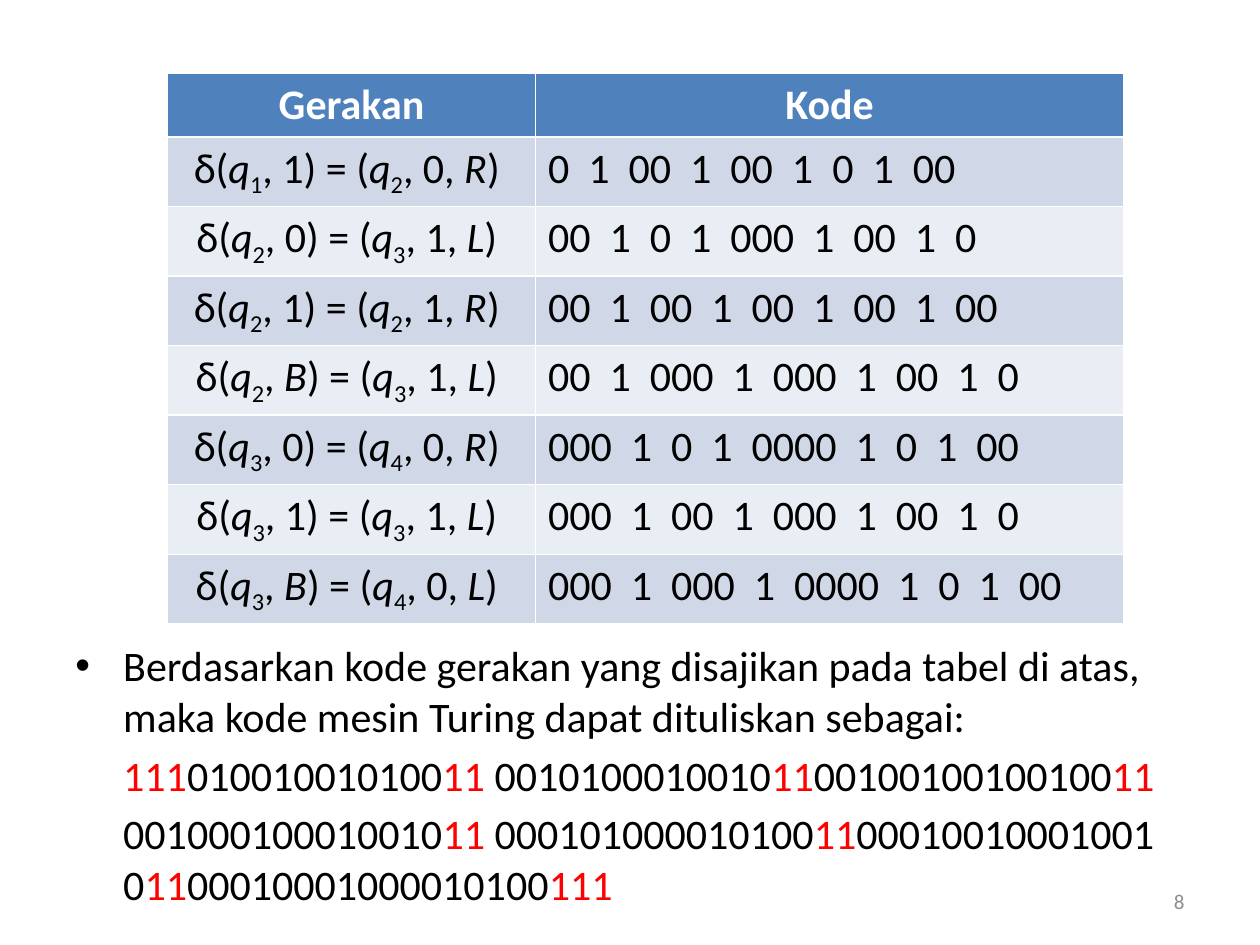
"""Build a slide that tabulates Turing machine moves with their binary codes."""
import lxml.etree
import pptx
import pptx.dml.color
import pptx.enum.text
import pptx.oxml.ns
import pptx.util

Inches = pptx.util.Inches
Pt = pptx.util.Pt
RGBColor = pptx.dml.color.RGBColor
ALIGN = pptx.enum.text.PP_ALIGN

BLACK = RGBColor(0, 0, 0)
WHITE = RGBColor(255, 255, 255)
RED = RGBColor(255, 0, 0)
GRAY = RGBColor(0x8C, 0x8C, 0x8C)
HEADER_BLUE = RGBColor(0x4F, 0x81, 0xBD)
BAND_COLORS = [RGBColor(0xD0, 0xD8, 0xE8), RGBColor(0xE9, 0xED, 0xF4)]

MOVES = [
    ("1", "1", "2", "0", "R", "0  1  00  1  00  1  0  1  00"),
    ("2", "0", "3", "1", "L", "00  1  0  1  000  1  00  1  0"),
    ("2", "1", "2", "1", "R", "00  1  00  1  00  1  00  1  00"),
    ("2", "B", "3", "1", "L", "00  1  000  1  000  1  00  1  0"),
    ("3", "0", "4", "0", "R", "000  1  0  1  0000  1  0  1  00"),
    ("3", "1", "3", "1", "L", "000  1  00  1  000  1  00  1  0"),
    ("3", "B", "4", "0", "L", "000  1  000  1  0000  1  0  1  00"),
]
INTRO = ("Berdasarkan kode gerakan yang disajikan pada tabel di atas, "
         "maka kode mesin Turing dapat dituliskan sebagai:")
MACHINE_CODE = [
    "|111|010010010100|11| 0010100010010|11|00100100100100|11|",
    "001000100010010|11| 000101000010100|11|00010010001001 0|11|"
    "00010001000010100|111|",
]


def style_para(para, color, size=24, align=ALIGN.LEFT):
    para.alignment = align
    para.font.name = "Calibri"
    para.font.size = Pt(size)
    para.font.color.rgb = color


def add_span(para, text, italic=False, subscript=False):
    span = para.add_run()
    span.text = text
    if italic:
        span.font.italic = True
    if subscript:
        span.font._element.set("baseline", "-25000")
    return span


deck = pptx.Presentation()
deck.slide_width, deck.slide_height = Inches(10), Inches(7.5)
page = deck.slides.add_slide(deck.slide_layouts[6])

table = page.shapes.add_table(
    len(MOVES) + 1, 2, Inches(1.33), Inches(0.58), Inches(7.59), Inches(4.35)).table
table.columns[0].width, table.columns[1].width = Inches(2.92), Inches(4.67)
for row in table.rows:
    row.height = Inches(0.55)
table.rows[0].height = Inches(0.5)

for cell, title in zip(table.rows[0].cells, ["Gerakan", "Kode"]):
    cell.fill.solid()
    cell.fill.fore_color.rgb = HEADER_BLUE
    para = cell.text_frame.paragraphs[0]
    para.text = title
    style_para(para, WHITE, align=ALIGN.CENTER)
    para.font.bold = True

for index, (state, read, target, write, move, code) in enumerate(MOVES):
    move_cell, code_cell = table.rows[index + 1].cells
    for cell in (move_cell, code_cell):
        cell.fill.solid()
        cell.fill.fore_color.rgb = BAND_COLORS[index % 2]
    para = move_cell.text_frame.paragraphs[0]
    style_para(para, BLACK, align=ALIGN.CENTER)
    add_span(para, "δ(")
    add_span(para, "q", italic=True)
    add_span(para, state, subscript=True)
    add_span(para, ", ")
    add_span(para, read, italic=read.isalpha())
    add_span(para, ") = (")
    add_span(para, "q", italic=True)
    add_span(para, target, subscript=True)
    add_span(para, f", {write}, ")
    add_span(para, move, italic=True)
    add_span(para, ") ")
    para = code_cell.text_frame.paragraphs[0]
    para.text = code
    style_para(para, BLACK)

body = page.shapes.add_textbox(Inches(0.5), Inches(5.03), Inches(9), Inches(2.05)).text_frame
body.word_wrap = True
para = body.paragraphs[0]
para.text = INTRO
style_para(para, BLACK)
properties = para._p.get_or_add_pPr()
properties.set("marL", str(Inches(0.38)))
properties.set("indent", str(Inches(-0.38)))
bullet_font = lxml.etree.Element(pptx.oxml.ns.qn("a:buFont"), typeface="Arial")
bullet = lxml.etree.Element(pptx.oxml.ns.qn("a:buChar"), char="•")
properties.insert(0, bullet_font)
properties.insert(1, bullet)

for line in MACHINE_CODE:
    para = body.add_paragraph()
    style_para(para, BLACK)
    para.space_before = Pt(4.8)
    para._p.get_or_add_pPr().set("marL", str(Inches(0.38)))
    for position, piece in enumerate(line.split("|")):
        if piece:
            span = add_span(para, piece)
            span.font.color.rgb = RED if position % 2 else BLACK

number_box = page.shapes.add_textbox(Inches(7.17), Inches(6.95), Inches(2.33), Inches(0.4))
number_box.text_frame.word_wrap = True
number_box.text_frame.vertical_anchor = pptx.enum.text.MSO_ANCHOR.MIDDLE
para = number_box.text_frame.paragraphs[0]
para.text = "8"
style_para(para, GRAY, size=12, align=ALIGN.RIGHT)

deck.save("out.pptx")
